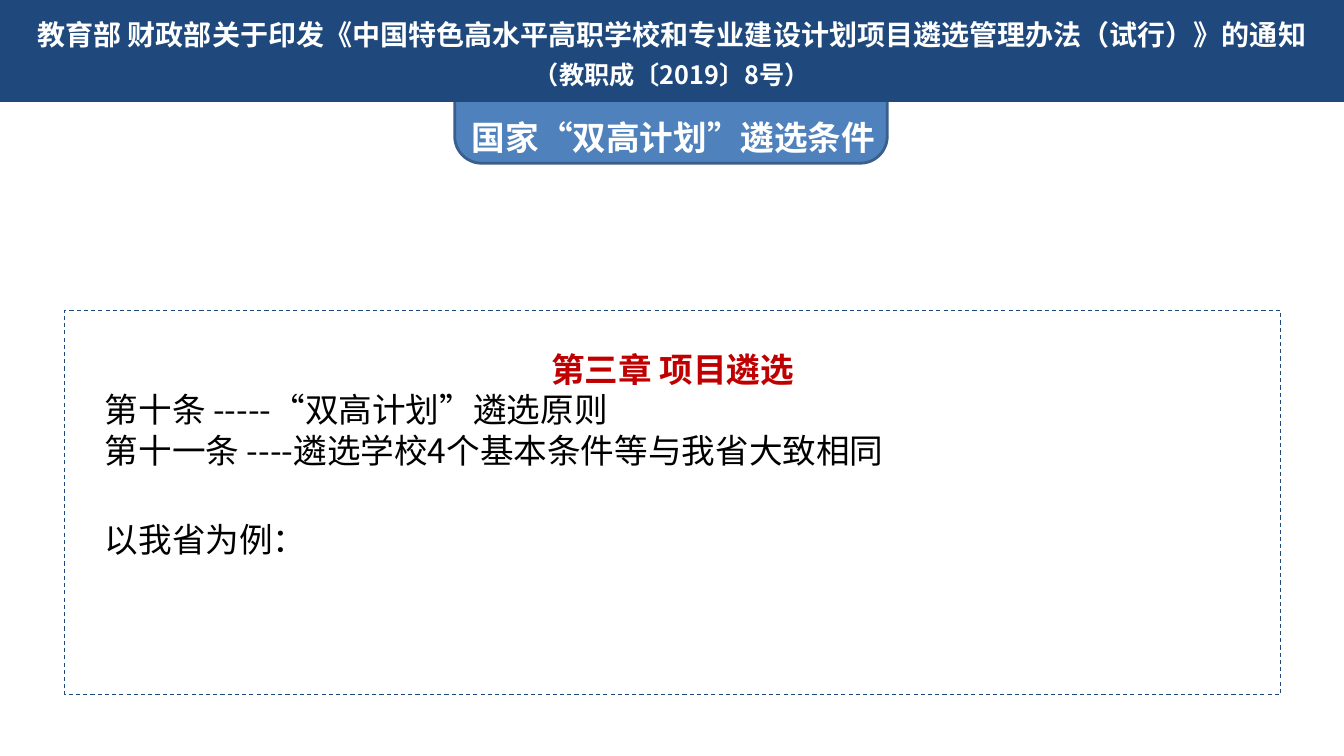
from lxml.etree import SubElement
from pptx import Presentation
from pptx.dml.color import RGBColor
from pptx.enum.dml import MSO_LINE
from pptx.enum.shapes import MSO_SHAPE as Shape
from pptx.enum.text import MSO_ANCHOR as Anchor, PP_ALIGN as Align
from pptx.oxml.ns import qn
from pptx.util import Inches, Pt


def color(value):
    return RGBColor.from_string(value)


def apply(target, values):
    for name, value in values.items():
        setattr(target, name, value)


class SlideBuilder:
    """Draws styled elements on the current slide."""

    font_name = "Noto Sans CJK SC"
    navy, blue, border = "1F497D", "4F81BD", "3A5F8C"
    white, black, red = "FFFFFF", "000000", "C00000"

    def __init__(self, slide):
        self.slide = slide

    def panel(self, kind, box, fill, line=None, line_format=None):
        shape = self.slide.shapes.add_shape(kind, *map(Inches, box))
        shape.shadow.inherit = False
        shape.fill.solid()
        shape.fill.fore_color.rgb = color(fill)
        if line:
            shape.line.color.rgb = color(line)
            apply(shape.line, line_format)
        else:
            shape.line.fill.background()
        return shape

    def text_box(self, box):
        return self.slide.shapes.add_textbox(*map(Inches, box))

    def fill_text(self, shape, paragraphs, frame_format):
        frame = shape.text_frame
        apply(frame, frame_format)
        for index, (text, size, ink, bold, layout) in enumerate(paragraphs):
            paragraph = frame.add_paragraph() if index else frame.paragraphs[0]
            apply(paragraph, layout)
            run = paragraph.add_run()
            run.text = text
            apply(run.font, {"name": self.font_name, "size": Pt(size), "bold": bold})
            run.font.color.rgb = color(ink)
            properties = run.font._element
            SubElement(properties, qn("a:ea"), typeface=self.font_name)


def main():
    presentation = Presentation()
    apply(presentation, {"slide_width": Inches(13.33), "slide_height": Inches(7.5)})
    builder = SlideBuilder(presentation.slides.add_slide(presentation.slide_layouts[6]))
    centered = {"alignment": Align.CENTER}
    justified = {"alignment": Align.JUSTIFY}

    chapter = builder.panel(
        Shape.RECTANGLE, (0.64, 3.08, 12.06, 3.81), builder.white, builder.navy,
        {"width": Pt(0.75), "dash_style": MSO_LINE.DASH})
    builder.fill_text(chapter, [
        ("第三章 项目遴选", 24, builder.red, True, centered),
        ("第十条 -----“双高计划”遴选原则", 24, builder.black, False, justified),
        ("第十一条 ----遴选学校4个基本条件等与我省大致相同", 24, builder.black, False, justified),
        ("以我省为例：", 24, builder.black, False, {**justified, "space_before": Pt(35)}),
    ], {"word_wrap": True, "vertical_anchor": Anchor.TOP, "margin_top": Inches(0.38),
        "margin_left": Inches(0.4), "margin_right": Inches(0.4)})

    tab = builder.panel(
        Shape.ROUNDED_RECTANGLE, (4.51, 0.76, 4.29, 0.86), builder.blue, builder.border,
        {"width": Pt(2)})
    tab.adjustments[0] = 0.31
    tab_title = builder.text_box((4.58, 1.11, 4.2, 0.5))
    builder.fill_text(tab_title, [
        ("国家“双高计划”遴选条件", 24, builder.white, True, centered),
    ], {"word_wrap": False, "vertical_anchor": Anchor.MIDDLE})

    header = builder.panel(Shape.RECTANGLE, (0, 0, 13.33, 1.01), builder.navy)
    builder.fill_text(header, [
        ("教育部 财政部关于印发《中国特色高水平高职学校和专业建设计划项目遴选管理办法（试行）》的通知",
         20, builder.white, True, centered),
        ("（教职成〔2019〕8号）", 18, builder.white, True, {**centered, "space_before": Pt(6)}),
    ], {"word_wrap": True, "vertical_anchor": Anchor.TOP, "margin_top": Inches(0.17),
        "margin_bottom": 0})

    presentation.save("out.pptx")


if __name__ == "__main__":
    main()
